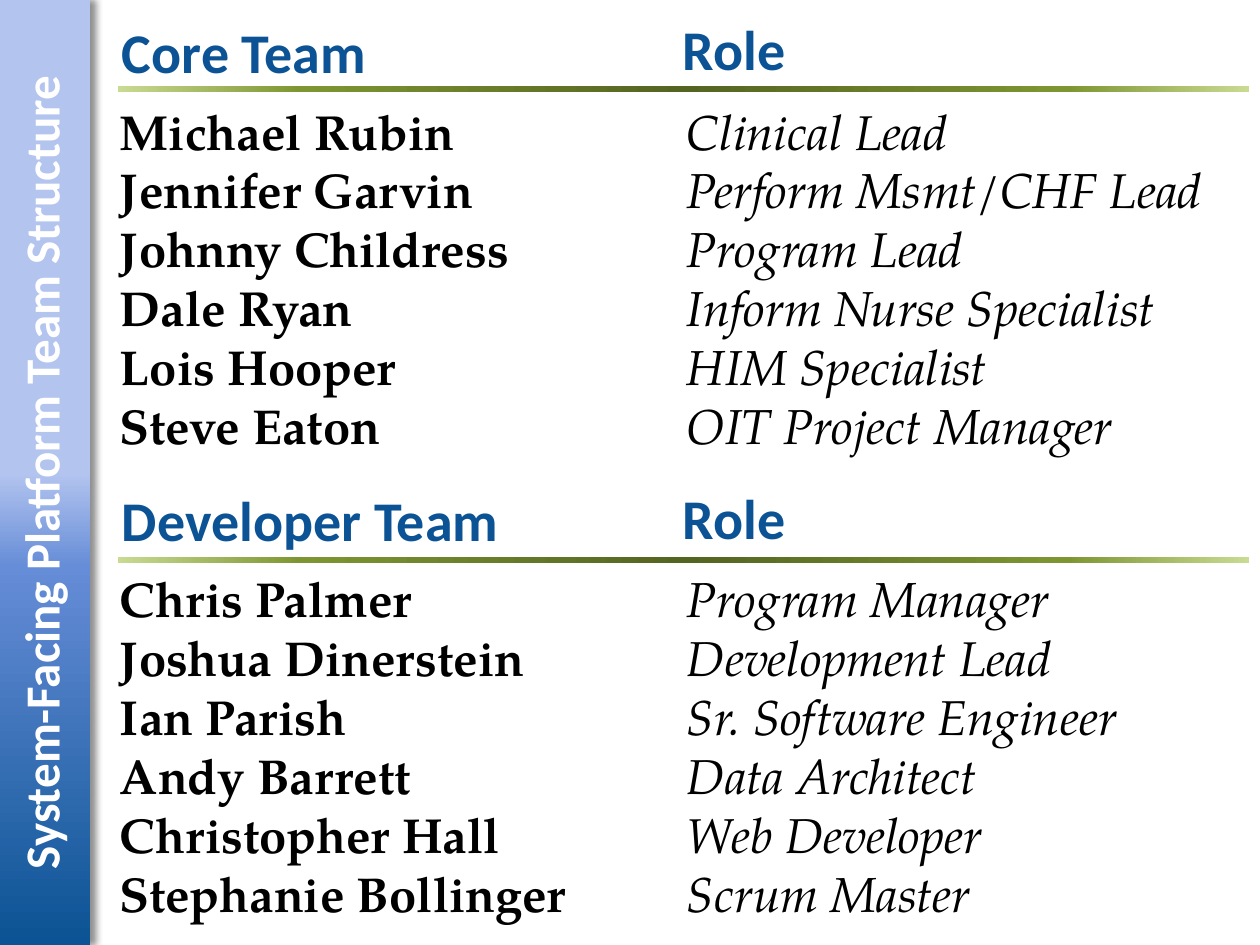
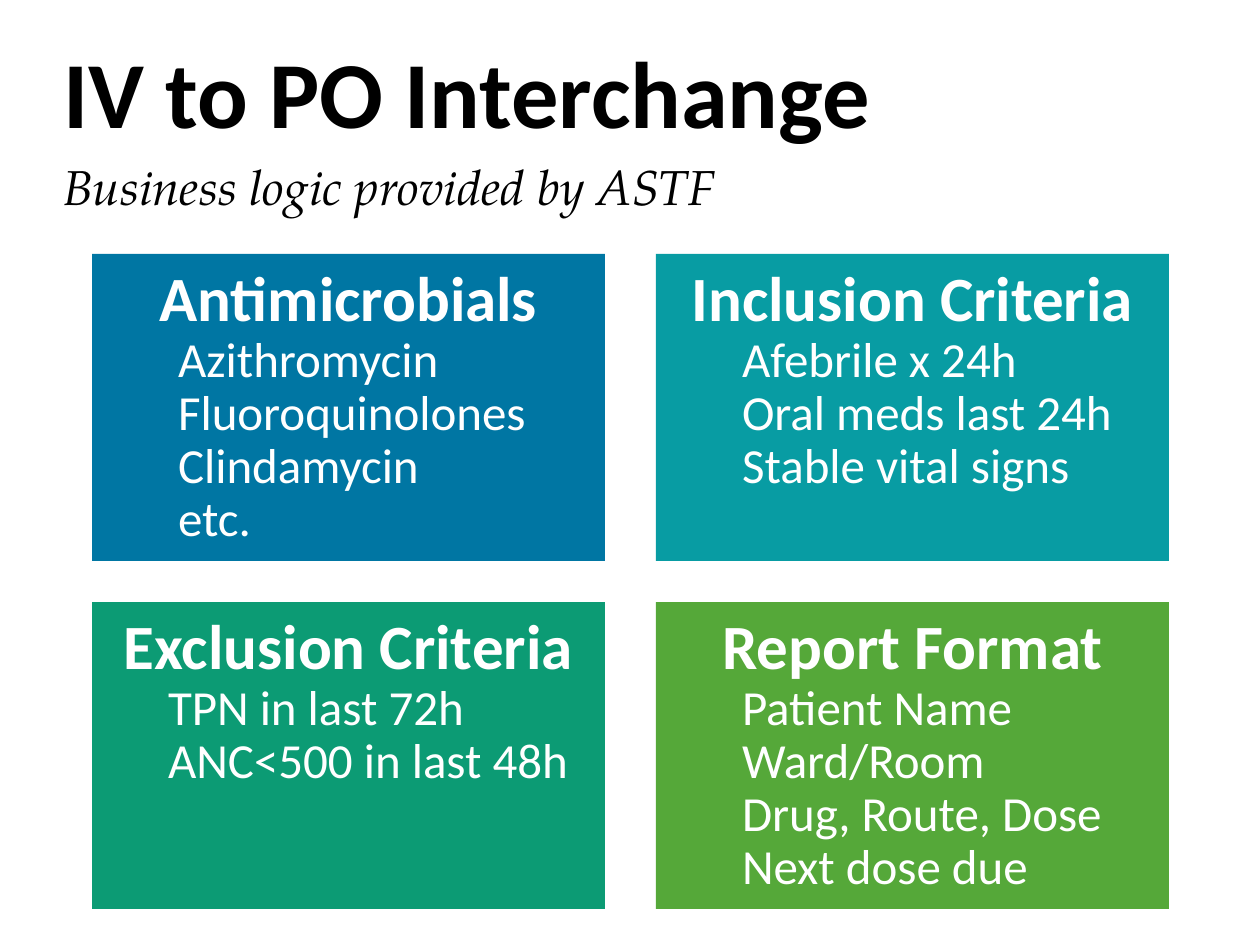
import dataclasses

import lxml.etree
import pptx
import pptx.dml.color
import pptx.enum.shapes
import pptx.enum.text
import pptx.oxml.ns
import pptx.util

PX_PER_INCH = 126
ALIGN = pptx.enum.text.PP_ALIGN
ANCHOR = pptx.enum.text.MSO_ANCHOR


@dataclasses.dataclass(frozen=True)
class TextStyle:
    font: str
    size: int
    colour: str
    bold: bool = False
    italic: bool = False


class Theme:
    sans, serif = "Calibri", "TeX Gyre Pagella"
    black, white, navy = "000000", "FFFFFF", "0B5394"
    blue, teal, jade, green = "0076A3", "089CA3", "0C9B74", "55A839"
    # Gradient stops: (percent, colour)
    rule_stops = [(0, "C9DA92"), (16, "7E9632"), (50, "546422"), (84, "7E9632"), (100, "C9DA92")]
    sidebar_stops = [(0, "B3C4EF"), (50, "B3C4EF"), (60, "668DD7"), (100, navy)]

    sidebar_title = TextStyle(sans, 28, white, bold=True)
    column_heading = TextStyle(sans, 32, navy, bold=True)
    member = TextStyle(serif, 28, black, bold=True)
    role = TextStyle(serif, 28, black, italic=True)
    title = TextStyle(sans, 54, black, bold=True)
    card_heading = TextStyle(sans, 36, white, bold=True)
    card_item = TextStyle(sans, 28, white)


CORE_TEAM = [
    ("Michael Rubin", "Clinical Lead"),
    ("Jennifer Garvin", "Perform Msmt/CHF Lead"),
    ("Johnny Childress", "Program Lead"),
    ("Dale Ryan", "Inform Nurse Specialist"),
    ("Lois Hooper", "HIM Specialist"),
    ("Steve Eaton", "OIT Project Manager"),
]
DEVELOPER_TEAM = [
    ("Chris Palmer", "Program Manager"),
    ("Joshua Dinerstein", "Development Lead"),
    ("Ian Parish", "Sr. Software Engineer"),
    ("Andy Barrett", "Data Architect"),
    ("Christopher Hall", "Web Developer"),
    ("Stephanie Bollinger", "Scrum Master"),
]
# Heading, fill, side inset in px, items
CARDS = [
    ("Antimicrobials", Theme.blue, 23, ["Azithromycin", "Fluoroquinolones", "Clindamycin", "etc."]),
    ("Inclusion Criteria", Theme.teal, 23, ["Afebrile x 24h", "Oral meds last 24h", "Stable vital signs"]),
    ("Exclusion Criteria", Theme.jade, 13, ["TPN in last 72h", "ANC<500 in last 48h"]),
    ("Report Format", Theme.green, 23, ["Patient Name", "Ward/Room", "Drug, Route, Dose", "Next dose due"]),
]


def px(length):
    return pptx.util.Emu(round(length * 914400 / PX_PER_INCH))


def rgb(colour):
    return pptx.dml.color.RGBColor.from_string(colour)


def add_element(parent, tag, **attributes):
    return lxml.etree.SubElement(parent, pptx.oxml.ns.qn(tag), attributes)


def place(shape, left, top, width, height):
    shape.left, shape.top, shape.width, shape.height = map(px, (left, top, width, height))


def set_frame(shape, insets, anchor=ANCHOR.TOP):
    """Return the wrapped, fixed-size text frame; insets are left, top, right, bottom."""
    frame = shape.text_frame
    frame.word_wrap = True
    frame.auto_size = pptx.enum.text.MSO_AUTO_SIZE.NONE
    frame.vertical_anchor = anchor
    frame.margin_left, frame.margin_top, frame.margin_right, frame.margin_bottom = map(px, insets)
    return frame


def add_paragraph(frame, alignment=ALIGN.LEFT, line_spacing=1.0, indent=0):
    """Start a paragraph without bullet, using the frame's first one while it is empty."""
    first = frame.paragraphs[0]
    paragraph = frame.add_paragraph() if first.runs else first
    paragraph.alignment = alignment
    paragraph.line_spacing = line_spacing
    paragraph.space_before = pptx.util.Pt(0)
    properties = paragraph._p.get_or_add_pPr()
    properties.set("marL", str(px(indent)))
    properties.set("indent", "0")
    add_element(properties, "a:buNone")
    return paragraph


def add_run(paragraph, text, style):
    run = paragraph.add_run()
    run.text = text
    run.font.name = style.font
    run.font.size = pptx.util.Pt(style.size)
    run.font.bold = style.bold
    run.font.italic = style.italic
    run.font.color.rgb = rgb(style.colour)


def add_rectangle(slide, left, top, width, height):
    shape = slide.shapes.add_shape(
        pptx.enum.shapes.MSO_SHAPE.RECTANGLE, *map(px, (left, top, width, height)))
    shape.shadow.inherit = False
    shape.line.fill.background()
    return shape


def fill_gradient(shape, stops, angle):
    shape.fill.gradient()
    shape.fill.gradient_angle = angle
    stop_list = shape._element.spPr.find(".//" + pptx.oxml.ns.qn("a:gsLst"))
    for old_stop in list(stop_list):
        stop_list.remove(old_stop)
    for percent, colour in stops:
        stop = add_element(stop_list, "a:gs", pos=str(percent * 1000))
        add_element(stop, "a:srgbClr", val=colour)


def add_side_shadow(shape):
    effects = shape._element.spPr.find(pptx.oxml.ns.qn("a:effectLst"))
    shadow = add_element(effects, "a:outerShdw", blurRad=str(pptx.util.Pt(4)),
                         dist=str(pptx.util.Pt(3)), dir="0", algn="l", rotWithShape="0")
    colour = add_element(shadow, "a:srgbClr", val=Theme.black)
    add_element(colour, "a:alpha", val="43000")


def add_sidebar(slide, text):
    sidebar = add_rectangle(slide, 0, 0, 90, 945)
    fill_gradient(sidebar, Theme.sidebar_stops, 270)
    add_side_shadow(sidebar)
    title = slide.shapes.title
    place(title, -600, 433, 1260, 79)
    title.rotation = 270
    frame = set_frame(title, (0, 6, 0, 0), ANCHOR.BOTTOM)
    add_run(add_paragraph(frame, ALIGN.CENTER), text, Theme.sidebar_title)
    slide.shapes._spTree.append(title._element)


def add_text_box(slide, bounds, side_inset, lines, style):
    box = slide.shapes.add_textbox(*map(px, bounds))
    frame = set_frame(box, (side_inset, 6, side_inset, 6))
    for line in lines:
        add_run(add_paragraph(frame), line, style)


def add_team(slide, top, rule_top, heading, members):
    """Draw a rule under two column headings, with names and roles below it."""
    names, roles = zip(*members)
    add_text_box(slide, (109, top + 11, 485, 81), 13, [heading], Theme.column_heading)
    add_text_box(slide, (670, top + 9, 485, 81), 13, ["Role"], Theme.column_heading)
    fill_gradient(add_rectangle(slide, 118, rule_top, 1131, 6), Theme.rule_stops, 0)
    add_text_box(slide, (120, top + 95, 560, 369), 0, names, Theme.member)
    add_text_box(slide, (687, top + 95, 562, 369), 0, roles, Theme.role)


def add_card(slide, left, top, heading, colour, side_inset, items):
    card = add_rectangle(slide, left, top, 513, 307)
    card.fill.solid()
    card.fill.fore_color.rgb = rgb(colour)
    frame = set_frame(card, (side_inset, 13, side_inset, 13))
    add_run(add_paragraph(frame, ALIGN.CENTER, 0.9), heading, Theme.card_heading)
    for item in items:
        add_run(add_paragraph(frame, line_spacing=0.9, indent=63), item, Theme.card_item)


def fill_placeholder(placeholder, bounds, text, style):
    place(placeholder, *bounds)
    frame = set_frame(placeholder, (13, 6, 13, 0))
    add_run(add_paragraph(frame), text, style)


def build_team_slide(presentation):
    slide = presentation.slides.add_slide(presentation.slide_layouts[5])
    add_team(slide, 0, 86, "Core Team", CORE_TEAM)
    add_team(slide, 468, 557, "Developer Team", DEVELOPER_TEAM)
    add_sidebar(slide, "System-Facing Platform Team Structure")


def build_interchange_slide(presentation):
    slide = presentation.slides.add_slide(presentation.slide_layouts[1])
    fill_placeholder(slide.shapes.title, (50, 28, 1134, 121), "IV to PO Interchange", Theme.title)
    fill_placeholder(slide.placeholders[1], (50, 150, 1134, 75),
                     "Business logic provided by ASTF", Theme.role)
    for index, card in enumerate(CARDS):
        row, column = divmod(index, 2)
        add_card(slide, 92 + column * 564, 254 + row * 348, *card)


def main():
    presentation = pptx.Presentation()
    presentation.slide_width, presentation.slide_height = px(1260), px(945)
    build_team_slide(presentation)
    build_interchange_slide(presentation)
    presentation.save("out.pptx")


if __name__ == "__main__":
    main()
